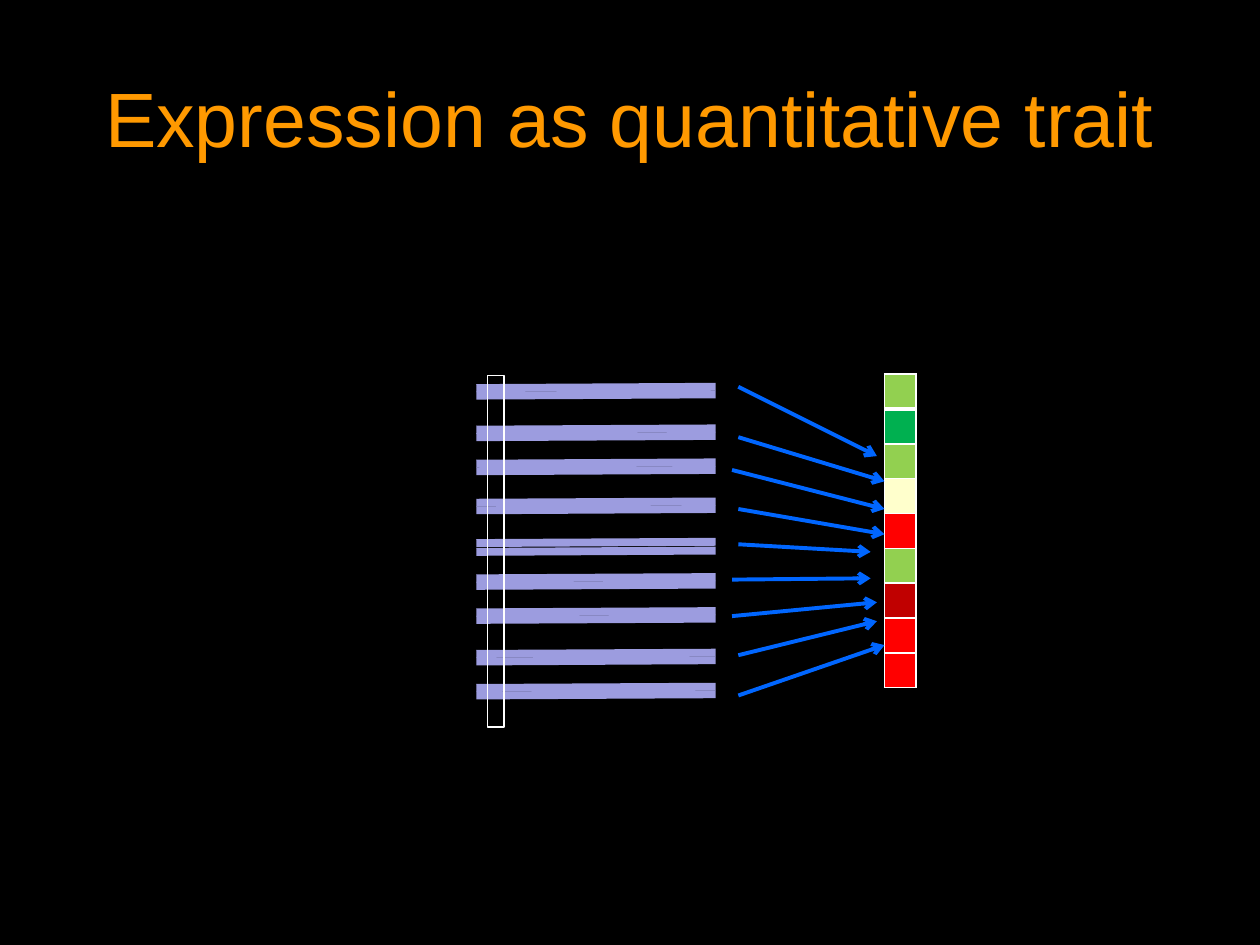
from lxml import etree
from pptx import Presentation
from pptx.dml.color import RGBColor
from pptx.enum.shapes import MSO_CONNECTOR, MSO_SHAPE
from pptx.enum.text import MSO_ANCHOR, PP_ALIGN
from pptx.oxml.ns import qn
from pptx.util import Inches, Pt

STRAIGHT = MSO_CONNECTOR.STRAIGHT
BLACK = RGBColor(0x00, 0x00, 0x00)
WHITE = RGBColor(0xFF, 0xFF, 0xFF)
ORANGE = RGBColor(0xFF, 0x99, 0x00)
LAVENDER = RGBColor(0x9C, 0x9C, 0xDF)
BLUE = RGBColor(0x00, 0x66, 0xFF)
LIGHT_GREEN = RGBColor(0x92, 0xD0, 0x50)
GREEN = RGBColor(0x00, 0xB0, 0x50)
CREAM = RGBColor(0xFF, 0xFF, 0xCC)
RED = RGBColor(0xFF, 0x00, 0x00)
DARK_RED = RGBColor(0xC0, 0x00, 0x00)

# Content
TITLE = "Expression as quantitative trait"
EXPRESSION = [LIGHT_GREEN, GREEN, LIGHT_GREEN, CREAM, RED,
              LIGHT_GREEN, DARK_RED, RED, RED]
# Each chromosome pair: height of the upper strand, gap to the lower one
PAIRS = [(3.08, 0.06), (3.41, 0.06), (3.68, 0.06), (3.99, 0.06), (4.31, 0.07),
         (4.59, 0.06), (4.86, 0.06), (5.19, 0.06), (5.46, 0.06)]
STRAND_LEFT, STRAND_RIGHT, STRAND_RISE = 3.78, 5.68, 0.01
# Arrows from each individual to its expression value: x1, y1, x2, y2
ARROWS = [(5.86, 3.07, 6.96, 3.62), (5.86, 3.47, 7.02, 3.82),
          (5.81, 3.73, 7.02, 4.04), (5.86, 4.04, 7.02, 4.24),
          (5.86, 4.32, 6.91, 4.38), (5.81, 4.60, 6.91, 4.59),
          (5.81, 4.89, 6.96, 4.78), (5.86, 5.20, 6.96, 4.93),
          (5.86, 5.52, 7.02, 5.12)]
CELL_WIDTH, CELL_HEIGHT = 0.25, 2.49 / len(EXPRESSION)


def add_line(shapes, ends, color, width, arrow=False):
    line = shapes.add_connector(STRAIGHT, *(Inches(v) for v in ends))
    line.line.color.rgb = color
    line.line.width = Pt(width)
    etree.SubElement(line._element.spPr, qn("a:effectLst"))
    if arrow:
        etree.SubElement(line.line._get_or_add_ln(), qn("a:tailEnd"), type="arrow")


def add_borders(cell, widths):
    properties = cell._tc.get_or_add_tcPr()
    for position, (side, width) in enumerate(widths.items()):
        border = etree.Element(qn("a:ln" + side), w=str(Pt(width)))
        fill = etree.SubElement(border, qn("a:solidFill"))
        etree.SubElement(fill, qn("a:srgbClr"), val=str(WHITE))
        properties.insert(position, border)


prs = Presentation()
prs.slide_width, prs.slide_height = Inches(10), Inches(7.5)
slide = prs.slides.add_slide(prs.slide_layouts[5])
slide.background.fill.solid()
slide.background.fill.fore_color.rgb = BLACK

# Title
title = slide.shapes.title
title.left, title.top, title.width, title.height = (
    Inches(v) for v in (0.5, 0.3, 9, 1.25))
title.text_frame.text = TITLE
title.text_frame.vertical_anchor = MSO_ANCHOR.MIDDLE
heading = title.text_frame.paragraphs[0]
heading.alignment = PP_ALIGN.CENTER
heading.font.name = "Arial"
heading.font.size = Pt(44)
heading.font.color.rgb = ORANGE

# Chromosome pairs, with the locus marked across all of them
chromosomes = slide.shapes.add_group_shape().shapes
for top, gap in PAIRS:
    for y in (top, top + gap):
        add_line(chromosomes, (STRAND_LEFT, y, STRAND_RIGHT, y - STRAND_RISE),
                 LAVENDER, 4.5)
locus = chromosomes.add_shape(
    MSO_SHAPE.RECTANGLE, *(Inches(v) for v in (3.87, 2.98, 0.13, 2.79)))
locus.shadow.inherit = False
locus.fill.background()
locus.line.color.rgb = WHITE
locus.line.width = Pt(0.75)

# Expression values
values = slide.shapes.add_table(
    len(EXPRESSION), 1, Inches(7.02), Inches(2.97),
    Inches(CELL_WIDTH), Inches(CELL_HEIGHT * len(EXPRESSION))).table
values.first_row = values.horz_banding = False
for row, color in enumerate(EXPRESSION):
    cell = values.cell(row, 0)
    cell.margin_left = cell.margin_right = cell.margin_top = cell.margin_bottom = 0
    cell.text_frame.paragraphs[0].font.size = Pt(10)
    cell.fill.solid()
    cell.fill.fore_color.rgb = color
    add_borders(cell, {"L": 1, "R": 1, "T": 3 if row == 1 else 1,
                       "B": 3 if row == 0 else 1})

# Arrows
arrows = slide.shapes.add_group_shape().shapes
for ends in ARROWS:
    add_line(arrows, ends, BLUE, 2.25, arrow=True)

prs.save("out.pptx")
